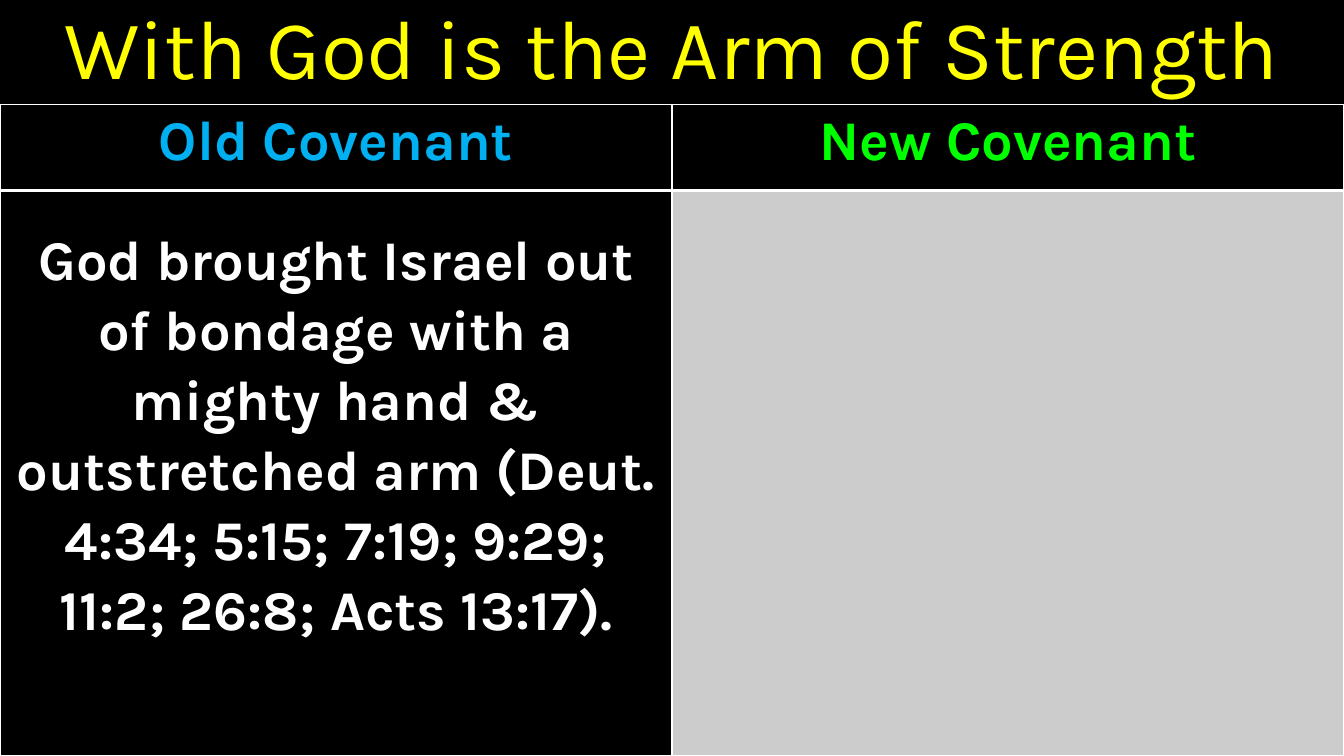
from lxml import etree
from pptx import Presentation
from pptx.dml.color import RGBColor
from pptx.enum.text import MSO_ANCHOR, PP_ALIGN
from pptx.oxml.ns import qn
from pptx.util import Inches, Pt

CENTER = PP_ALIGN.CENTER
TOP, MIDDLE = MSO_ANCHOR.TOP, MSO_ANCHOR.MIDDLE
FONT = "Karla"
TITLE_ONLY = 5
COLORS = {
    "black": "000000", "white": "FFFFFF", "gray": "CCCCCC",
    "yellow": "FFFF00", "blue": "00B0F0", "green": "00FF00",
}

# Content: each cell is (text, text colour, fill)
TITLE = "With God is the Arm of Strength"
ROWS = [
    [("Old Covenant", "blue", "black"), ("New Covenant", "green", "black")],
    [("God brought Israel out of bondage with a mighty hand & outstretched arm "
      "(Deut. 4:34; 5:15; 7:19; 9:29; 11:2; 26:8; Acts 13:17).", "white", "black"),
     ("", "white", "gray")],
]

# Layout in inches
WIDTH, HEIGHT = 13.33, 7.5
TITLE_HEIGHT = 1.03
TABLE_TOP = 1.04
ROW_HEIGHTS = [0.85, 5.61]
TOP_MARGINS = [0, 0.34]
SIDE_MARGIN = 0.07


def color(name):
    return RGBColor.from_string(COLORS[name])


def write(frame, text, size, color_name, spacing, bold=False):
    para = frame.paragraphs[0]
    para.text = text
    para.alignment = CENTER
    para.line_spacing = spacing
    para.font.name = FONT
    para.font.size = Pt(size)
    para.font.bold = bold
    para.font.color.rgb = color(color_name)


def add_borders(cell, bottom_width):
    properties = cell._tc.get_or_add_tcPr()
    widths = {"a:lnL": 1, "a:lnR": 1, "a:lnT": 1, "a:lnB": bottom_width}
    for position, (tag, width) in enumerate(widths.items()):
        line = etree.Element(qn(tag), w=str(Pt(width)))
        fill = etree.SubElement(line, qn("a:solidFill"))
        etree.SubElement(fill, qn("a:srgbClr"), val=COLORS["white"])
        properties.insert(position, line)


deck = Presentation()
deck.slide_width, deck.slide_height = Inches(WIDTH), Inches(HEIGHT)
page = deck.slides.add_slide(deck.slide_layouts[TITLE_ONLY])
page.background.fill.solid()
page.background.fill.fore_color.rgb = color("black")

# Title
title = page.shapes.title
title.left, title.top = Inches(0), Inches(0)
title.width, title.height = Inches(WIDTH), Inches(TITLE_HEIGHT)
title.text_frame.vertical_anchor = MIDDLE
write(title.text_frame, TITLE, 60, "yellow", 0.9)

# Covenant table
table = page.shapes.add_table(
    len(ROWS), len(ROWS[0]), Inches(0), Inches(TABLE_TOP),
    Inches(WIDTH), Inches(sum(ROW_HEIGHTS))).table
for row_index, row in enumerate(ROWS):
    table.rows[row_index].height = Inches(ROW_HEIGHTS[row_index])
    for column_index, (text, text_color, fill_color) in enumerate(row):
        cell = table.cell(row_index, column_index)
        cell.margin_left = cell.margin_right = Inches(SIDE_MARGIN)
        cell.margin_top = Inches(TOP_MARGINS[row_index])
        cell.margin_bottom = Inches(0)
        cell.vertical_anchor = TOP
        cell.fill.solid()
        cell.fill.fore_color.rgb = color(fill_color)
        write(cell.text_frame, text, 40, text_color, 1.07, bold=True)
        add_borders(cell, bottom_width=3 if row_index == 0 else 1)

# The thick rule under the header is shared with the cells below it
for cell in table.rows[1].cells:
    cell._tc.tcPr.find(qn("a:lnT")).set("w", str(Pt(3)))

deck.save("out.pptx")
